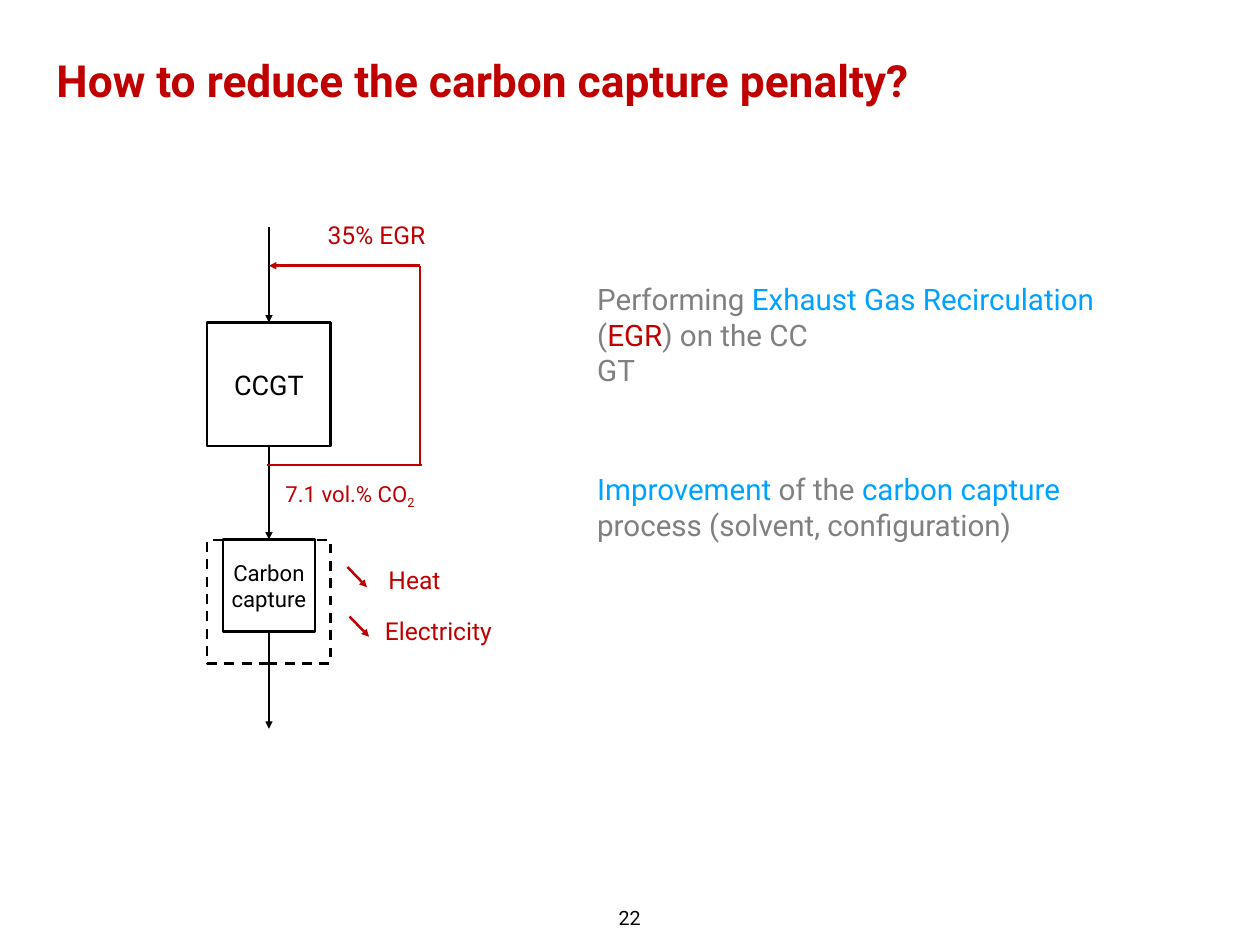
import pptx
import pptx.util
import pptx.dml.color
import pptx.enum.dml
import pptx.enum.shapes
import pptx.enum.text
import pptx.oxml
import pptx.oxml.ns

Cm, Pt = pptx.util.Cm, pptx.util.Pt
Shape = pptx.enum.shapes.MSO_SHAPE
Align = pptx.enum.text.PP_ALIGN
Anchor = pptx.enum.text.MSO_ANCHOR
COLORS = {"black": "000000", "red": "C00000", "gray": "808080", "blue": "00A2FF"}
AXIS = 7.71  # centre line of the process, in cm

deck = pptx.Presentation()
deck.slide_width, deck.slide_height = Cm(36.12), Cm(27.1)
slide = deck.slides.add_slide(deck.slide_layouts[6])


def rgb(name):
    return pptx.dml.color.RGBColor.from_string(COLORS[name])


def write(text, left, top, width, height, size=20, color="red", bold=False,
          align=Align.CENTER, anchor=Anchor.MIDDLE, wrap=True, border=False, dash=None):
    """Add a text box or bordered square; text is a string or paragraphs of (words, colour, baseline)."""
    place = Cm(left), Cm(top), Cm(width), Cm(height)
    if border:
        box = slide.shapes.add_shape(Shape.RECTANGLE, *place)
        box.shadow.inherit = False
        box.fill.background()
        box.line.color.rgb = rgb("black")
        box.line.width = Pt(2)
        box.line.dash_style = dash
    else:
        box = slide.shapes.add_textbox(*place)
    frame = box.text_frame
    frame.word_wrap = wrap
    frame.vertical_anchor = anchor
    frame.margin_left = frame.margin_right = Cm(0.15)
    frame.margin_top = frame.margin_bottom = Cm(0.15)
    paras = [[(text, color, 0)]] if isinstance(text, str) else text
    for i, runs in enumerate(paras):
        para = frame.add_paragraph() if i else frame.paragraphs[0]
        para.alignment = align
        for words, tint, base in runs:
            run = para.add_run()
            run.text = words
            run.font.name = "Roboto"
            run.font.size = Pt(size)
            run.font.bold = bold
            run.font.color.rgb = rgb(tint)
            if base:
                run.font._element.set("baseline", str(base * 1000))
    return box


# Title and page number
write("How to reduce the carbon capture penalty?", 1.47, 1.37, 31.8, 3.76,
      size=36, bold=True, align=Align.LEFT, anchor=Anchor.TOP)
write("22", 17.58, 25.83, 0.94, 0.89, size=16, color="black", anchor=Anchor.TOP, wrap=False)

# Process blocks, centred on the axis
ccgt = write("CCGT", AXIS - 1.77, 9.25, 3.54, 3.54, size=22, color="black", border=True)
write("", AXIS - 1.77, 15.49, 3.54, 3.54, border=True,
      dash=pptx.enum.dml.MSO_LINE.DASH)
capture = write("Carbon capture", AXIS - 1.32, 15.47, 2.64, 2.64, size=18,
                color="black", border=True)

# Lines: start, end, colour, arrowhead, joined blocks
lines = [
    (AXIS, 6.5, AXIS, 9.25, "black", True, None, ccgt),
    (AXIS, 12.79, AXIS, 15.47, "black", True, ccgt, capture),
    (AXIS, 18.11, AXIS, 20.9, "black", True, capture, None),
    (7.65, 13.34, 12.09, 13.34, "red", False, None, None),
    (12.04, 13.34, 12.04, 7.62, "red", False, None, None),
    (12.04, 7.62, AXIS, 7.62, "red", True, None, None),
    (9.96, 16.26, 10.52, 16.84, "red", True, None, None),
    (10.02, 17.68, 10.58, 18.26, "red", True, None, None),
]
for x1, y1, x2, y2, color, arrow, source, target in lines:
    link = slide.shapes.add_connector(pptx.enum.shapes.MSO_CONNECTOR.STRAIGHT,
                                      Cm(x1), Cm(y1), Cm(x2), Cm(y2))
    link.line.color.rgb = rgb(color)
    link.line.width = Pt(2)
    if arrow:
        head = pptx.oxml.parse_xml(
            f'<a:tailEnd {pptx.oxml.ns.nsdecls("a")} type="triangle"/>')
        link.line._get_or_add_ln().append(head)
    link._element.spPr.append(
        pptx.oxml.parse_xml(f'<a:effectLst {pptx.oxml.ns.nsdecls("a")}/>'))
    if source:
        link.begin_connect(source, 2)
    if target:
        link.end_connect(target, 0)

# Labels of the diagram
write("35% EGR", 9.07, 6.15, 3.45, 1.14, wrap=False)
write([[("7.1 vol.% CO", "red", 0), ("2 ", "red", -25)]],
      7.87, 13.67, 4.42, 1.07, size=18, wrap=False)
write("Heat", 10.31, 16.05, 3.15, 1.14)
write("Electricity", 10.13, 17.53, 4.88, 1.14)

# Measures
write([[("Performing ", "gray", 0), ("Exhaust Gas Recirculation ", "blue", 0),
        ("(", "gray", 0), ("EGR", "red", 0), (") on the CC", "gray", 0)],
       [("GT", "gray", 0)]],
      16.97, 7.92, 16.38, 3.35, size=24, align=Align.LEFT)
write([[("Improvement", "blue", 0), (" of the ", "gray", 0),
        ("carbon capture ", "blue", 0), ("process (solvent, configuration)", "gray", 0)]],
      16.97, 13.36, 15.95, 2.34, size=24, align=Align.LEFT)

deck.save("out.pptx")
